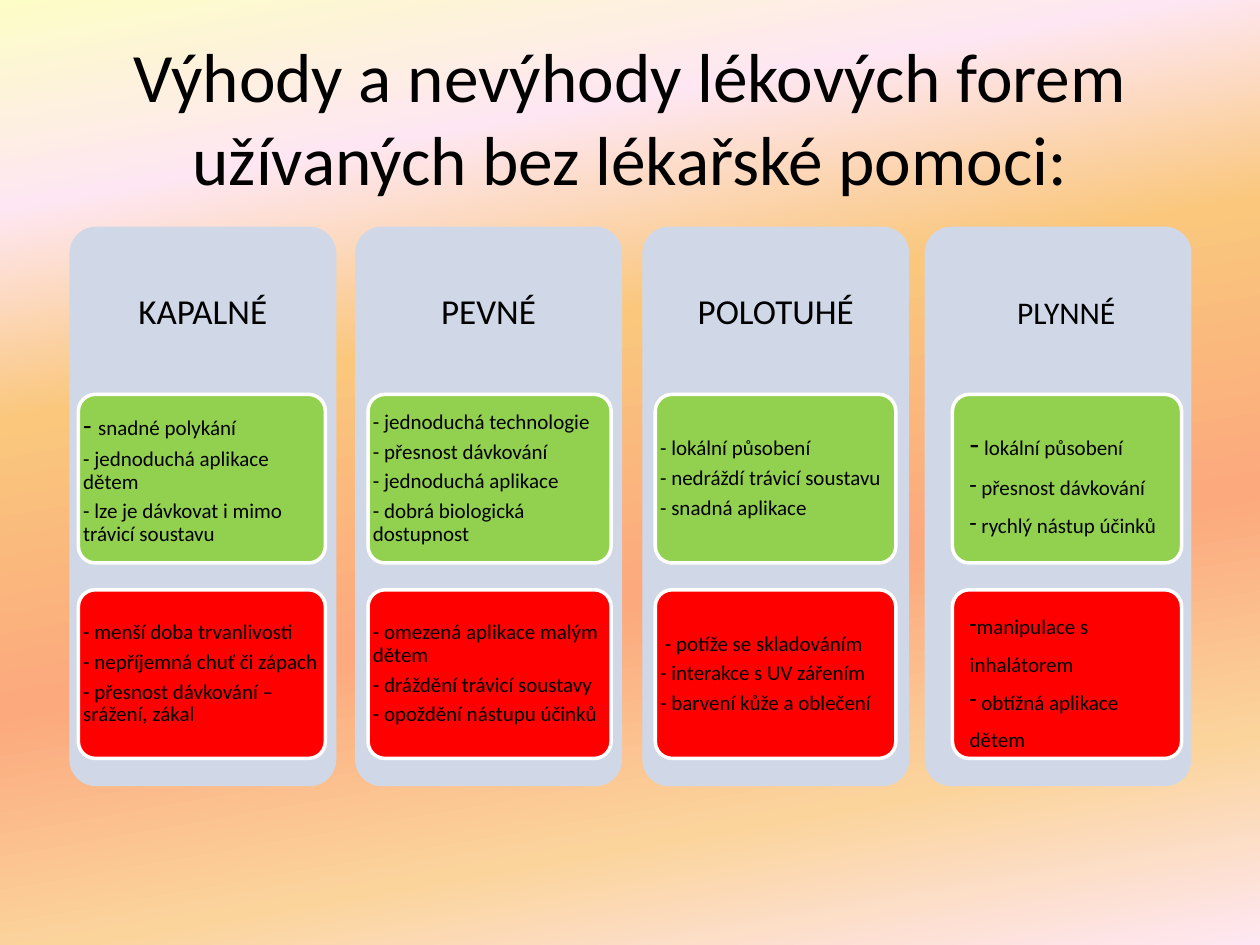
"""Build the slide comparing pros and cons of four dosage forms."""
from copy import deepcopy

from pptx import Presentation
from pptx.dml.color import RGBColor
from pptx.enum import shapes, text
from pptx.oxml import ns, xmlchemy
from pptx.util import Cm, Pt

COLORS = {"panel": "D0D8E8", "pros": "92D050", "cons": "FF0000",
          "border": "FFFFFF", "ink": "000000"}
BACKDROP = [(0, "FDFDC7"), (0.18, "FEE7F2"), (0.36, "FAC77D"),
            (0.61, "FBA97D"), (0.82, "FBD49C"), (1, "FEE7F2")]
FONT = "Calibri"
PANEL_TOP, PANEL_WIDTH, PANEL_HEIGHT = 4.57, 5.38, 11.28
HEADING_HEIGHT, CARD_HEIGHT = 3.38, 3.4
CARD_TOPS = {"pros": 7.95, "cons": 11.89}

FORMS = [
    {"heading": "KAPALNÉ", "left": 1.4, "card": (1.58, 4.98),
     "pros": [[("- ", 16), ("snadné polykání", 12)], "- jednoduchá aplikace dětem",
              "- lze je dávkovat i mimo trávicí soustavu"],
     "cons": ["- menší doba trvanlivosti", "- nepříjemná chuť či zápach",
              "- přesnost dávkování – srážení, zákal"]},
    {"heading": "PEVNÉ", "left": 7.16, "card": (7.42, 4.9),
     "pros": ["- jednoduchá technologie", "- přesnost dávkování",
              "- jednoduchá aplikace", "- dobrá biologická dostupnost"],
     "cons": ["- omezená aplikace malým dětem", "- dráždění trávicí soustavy",
              "- opoždění nástupu účinků"]},
    {"heading": "POLOTUHÉ", "left": 12.95, "card": (13.21, 4.85),
     "pros": ["- lokální působení", "- nedráždí trávicí soustavu", "- snadná aplikace"],
     "cons": [" - potíže se skladováním", "- interakce s UV zářením",
              "- barvení kůže a oblečení"]},
]
GASEOUS = {
    "heading": "PLYNNÉ", "left": 18.64, "card": (19.2, 4.62),
    "pros": [[("-", 18), (" lokální působení", 12)], " přesnost dávkování",
             " rychlý nástup účinků"],
    "cons": ["manipulace s inhalátorem", " obtížná aplikace dětem"]}


def add_run(paragraph, words, size):
    """Append one run in the slide's font."""
    run = paragraph.add_run()
    run.text = words
    run.font.size = Pt(size)
    run.font.name = FONT
    run.font.color.rgb = RGBColor.from_string(COLORS["ink"])


def add_dash_bullet(paragraph):
    """Give a paragraph a dash bullet without indent."""
    properties = paragraph._p.get_or_add_pPr()
    properties.set("marL", "0")
    properties.set("indent", "0")
    bullet = xmlchemy.OxmlElement("a:buChar")
    bullet.set("char", "-")
    properties.append(bullet)


def paint_background(slide):
    """Fill the background with the slanted pastel gradient."""
    fill = slide.background.fill
    fill.gradient()
    fill.gradient_angle = 280
    stop_list = slide.element.find(".//" + ns.qn("a:gsLst"))
    for _ in range(len(BACKDROP) - len(stop_list)):
        stop_list.append(deepcopy(stop_list[0]))
    for stop, (position, color) in zip(fill.gradient_stops, BACKDROP):
        stop.position = position
        stop.color.rgb = RGBColor.from_string(color)


def add_title(slide, lines):
    """Place the centred title, one line per entry."""
    title = slide.shapes.title
    title.left, title.top, title.width, title.height = Cm(1.27), Cm(0.76), Cm(22.86), Cm(3.18)
    frame = title.text_frame
    frame.auto_size = text.MSO_AUTO_SIZE.NONE
    frame.vertical_anchor = text.MSO_ANCHOR.MIDDLE
    paragraph = frame.paragraphs[0]
    paragraph.alignment = text.PP_ALIGN.CENTER
    for index, line in enumerate(lines):
        if index:
            paragraph.add_line_break()
        add_run(paragraph, line, 39.6)


def add_rounded(slide, left, top, width, height, color):
    """Draw a rounded rectangle without outline."""
    box = slide.shapes.add_shape(shapes.MSO_SHAPE.ROUNDED_RECTANGLE,
                                 Cm(left), Cm(top), Cm(width), Cm(height))
    box.adjustments[0] = 0.1
    box.shadow.inherit = False
    box.fill.solid()
    box.fill.fore_color.rgb = RGBColor.from_string(COLORS[color])
    box.line.fill.background()
    return box


def add_heading(slide, words, left, top, width, height, size, wrap):
    """Write a column heading."""
    heading = slide.shapes.add_textbox(Cm(left), Cm(top), Cm(width), Cm(height))
    frame = heading.text_frame
    frame.word_wrap = wrap
    frame.vertical_anchor = text.MSO_ANCHOR.MIDDLE
    paragraph = frame.paragraphs[0]
    paragraph.alignment = text.PP_ALIGN.CENTER
    add_run(paragraph, words, size)


def add_card(slide, form, side, loose):
    """Draw a pros or cons card; a loose one is top-set with dash bullets."""
    left, width = form["card"]
    card = add_rounded(slide, left, CARD_TOPS[side], width, CARD_HEIGHT, side)
    card.line.color.rgb = RGBColor.from_string(COLORS["border"])
    card.line.width = Pt(2)
    frame = card.text_frame
    frame.word_wrap = True
    frame.vertical_anchor = text.MSO_ANCHOR.TOP if loose else text.MSO_ANCHOR.MIDDLE
    if not loose:
        frame.margin_left = frame.margin_right = frame.margin_top = frame.margin_bottom = 0
    for index, point in enumerate(form[side]):
        paragraph = frame.add_paragraph() if index else frame.paragraphs[0]
        paragraph.alignment = text.PP_ALIGN.LEFT
        paragraph.line_spacing = 1.5 if loose else 0.9
        paragraph.space_after = Pt(0 if loose else 4)
        plain = isinstance(point, str)
        if loose and plain:
            add_dash_bullet(paragraph)
        for words, size in [(point, 12)] if plain else point:
            add_run(paragraph, words, size)


def add_column(slide, form, loose=False):
    """Draw one dosage form: panel, heading and both cards."""
    add_rounded(slide, form["left"], PANEL_TOP, PANEL_WIDTH, PANEL_HEIGHT, "panel")
    if loose:
        add_heading(slide, form["heading"], 20.24, 5.77, 2.51, 1.02, 18, False)
    else:
        add_heading(slide, form["heading"], form["left"], PANEL_TOP,
                    PANEL_WIDTH, HEADING_HEIGHT, 20, True)
    for side in CARD_TOPS:
        add_card(slide, form, side, loose)


def main():
    """Build and save the slide."""
    deck = Presentation()
    deck.slide_width, deck.slide_height = Cm(25.4), Cm(19.05)
    slide = deck.slides.add_slide(deck.slide_layouts[5])
    paint_background(slide)
    add_title(slide, ["Výhody a nevýhody lékových forem", "užívaných bez lékařské pomoci:"])
    for form in FORMS:
        add_column(slide, form)
    add_column(slide, GASEOUS, loose=True)
    deck.save("out.pptx")


if __name__ == "__main__":
    main()
